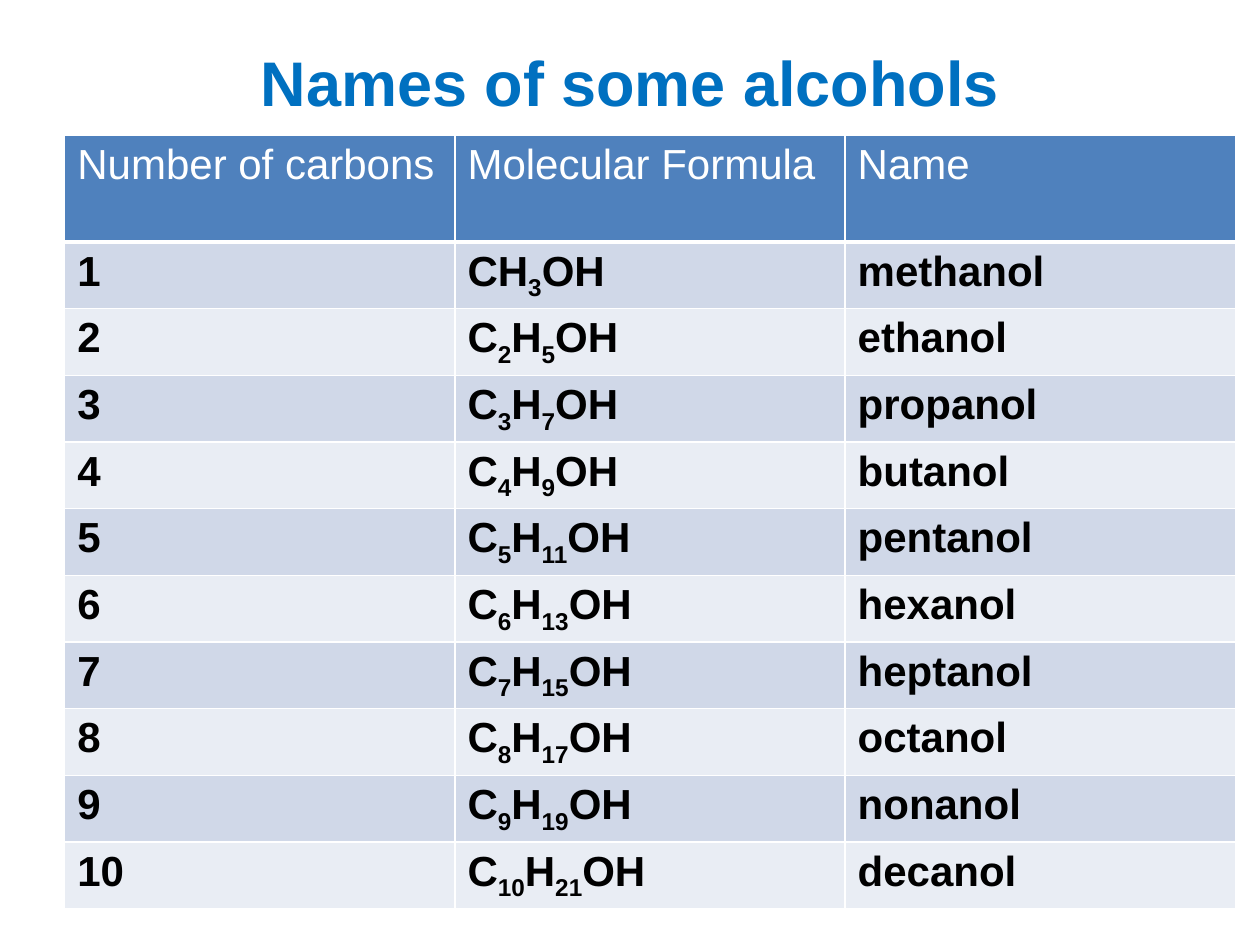
import itertools

import lxml.etree
import pptx
import pptx.dml.color
import pptx.enum.text
import pptx.oxml.ns
import pptx.util

Pt = pptx.util.Pt
COLORS = {
    "title": "0070C0",
    "head": "4F81BD",
    "odd": "D0D8E8",
    "even": "E9EDF4",
    "white": "FFFFFF",
    "black": "000000",
}
HEADS = ["Number of carbons", "Molecular Formula", "Name"]
NAMES = ["methanol", "ethanol", "propanol", "butanol", "pentanol",
         "hexanol", "heptanol", "octanol", "nonanol", "decanol"]


def formula(count):
    carbon = "C" if count == 1 else f"C{count}"
    return f"{carbon}H{2 * count + 1}OH"


class Deck:
    font = "Arial"

    def __init__(self, width, height):
        self.show = pptx.Presentation()
        self.show.slide_width = Pt(width)
        self.show.slide_height = Pt(height)
        self.slide = self.show.slides.add_slide(self.show.slide_layouts[5])

    def color(self, name):
        return pptx.dml.color.RGBColor.from_string(COLORS[name])

    def style(self, para, size, color, bold):
        para.font.name = self.font
        para.font.size = Pt(size)
        para.font.bold = bold
        para.font.color.rgb = self.color(color)

    def title(self, text, left, top, width, height):
        shape = self.slide.shapes.title
        shape.left, shape.top = Pt(left), Pt(top)
        shape.width, shape.height = Pt(width), Pt(height)
        frame = shape.text_frame
        frame.text = text
        frame.vertical_anchor = pptx.enum.text.MSO_ANCHOR.MIDDLE
        para = frame.paragraphs[0]
        para.alignment = pptx.enum.text.PP_ALIGN.CENTER
        self.style(para, 36, "title", True)

    def border(self, cell, side, width):
        qn = pptx.oxml.ns.qn
        props = cell._tc.get_or_add_tcPr()
        line = lxml.etree.SubElement(props, qn(f"a:ln{side}"), w=str(Pt(width)))
        fill = lxml.etree.SubElement(line, qn("a:solidFill"))
        lxml.etree.SubElement(fill, qn("a:srgbClr"), val=COLORS["white"])

    def cell(self, cell, text, fill, color, bold, base, lower=False):
        for side in "LRTB":
            self.border(cell, side, base if side == "B" else 1)
        cell.fill.solid()
        cell.fill.fore_color.rgb = self.color(fill)
        para = cell.text_frame.paragraphs[0]
        self.style(para, 24, color, bold)
        parts = itertools.groupby(text, str.isdigit) if lower else [(False, text)]
        for digit, chars in parts:
            run = para.add_run()
            run.text = "".join(chars)
            if digit:
                run._r.get_or_add_rPr().set("baseline", "-25000")

    def table(self, heads, rows, left, top, width, first, step):
        height = first + step * len(rows)
        table = self.slide.shapes.add_table(
            len(rows) + 1, len(heads), Pt(left), Pt(top), Pt(width), Pt(height)
        ).table
        for col in table.columns:
            col.width = Pt(width / len(heads))
        for index, row in enumerate(table.rows):
            row.height = Pt(step if index else first)
        for col, text in enumerate(heads):
            self.cell(table.cell(0, col), text, "head", "white", False, 3)
        for index, row in enumerate(rows, 1):
            fill = "odd" if index % 2 else "even"
            for col, text in enumerate(row):
                self.cell(table.cell(index, col), text, fill, "black", True, 1, col == 1)


def main():
    deck = Deck(720, 540)
    deck.title("Names of some alcohols", 0, 9.5, 720, 74)
    rows = [(str(count), formula(count), name) for count, name in enumerate(NAMES, 1)]
    deck.table(HEADS, rows, 37, 77.3, 669, 61, 38.1)
    deck.show.save("out.pptx")


if __name__ == "__main__":
    main()
